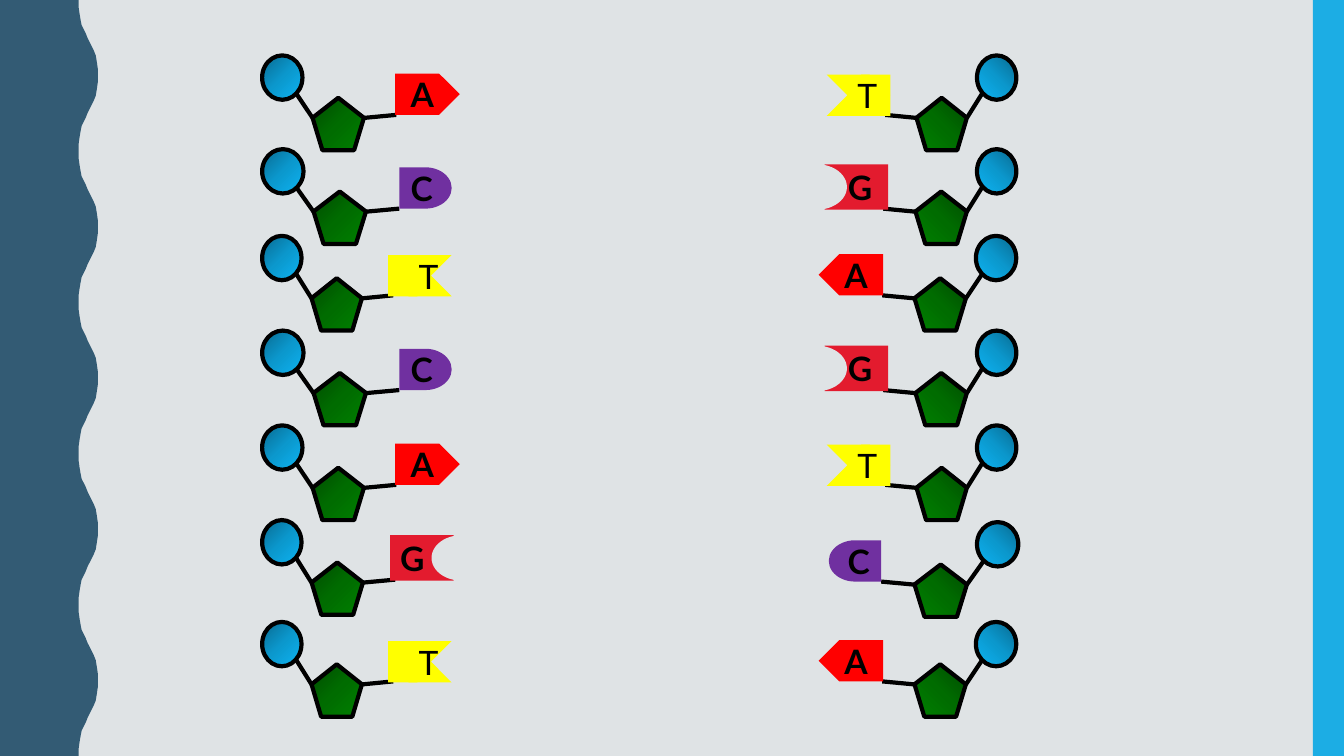
from copy import deepcopy

from lxml import etree
from pptx import Presentation
from pptx.dml.color import RGBColor
from pptx.enum.shapes import MSO_CONNECTOR, MSO_SHAPE
from pptx.enum.text import MSO_ANCHOR, PP_ALIGN
from pptx.oxml.ns import qn
from pptx.util import Inches, Pt

STRAIGHT = MSO_CONNECTOR.STRAIGHT
RECT, CIRCLE, PENTAGON = MSO_SHAPE.RECTANGLE, MSO_SHAPE.OVAL, MSO_SHAPE.REGULAR_PENTAGON
POINTED, NOTCHED, ROUNDED = MSO_SHAPE.PENTAGON, MSO_SHAPE.CHEVRON, MSO_SHAPE.FLOWCHART_DELAY
LEFT, CENTER, MIDDLE = PP_ALIGN.LEFT, PP_ALIGN.CENTER, MSO_ANCHOR.MIDDLE

BACKGROUND = RGBColor(0xDF, 0xE3, 0xE5)
NAVY = RGBColor(0x33, 0x5B, 0x74)
SKY = RGBColor(0x1C, 0xAD, 0xE4)
BLACK = RGBColor(0x00, 0x00, 0x00)
RED = RGBColor(0xFF, 0x00, 0x00)
PURPLE = RGBColor(0x70, 0x30, 0xA0)
YELLOW = RGBColor(0xFF, 0xFF, 0x00)
CRIMSON = RGBColor(0xE3, 0x1B, 0x2E)
PHOSPHATE = (RGBColor(0x08, 0x6A, 0x90), RGBColor(0x0B, 0x98, 0xCD), RGBColor(0x0D, 0xB4, 0xF3))
SUGAR = (RGBColor(0x00, 0x4C, 0x00), RGBColor(0x00, 0x6C, 0x00), RGBColor(0x00, 0x80, 0x00))

LETTER_FONT = {"name": "Lato", "size": Pt(24), "bold": True}

# Per base: phosphate width, sugar left and width, end of the link to the base
BACKBONE = {
    "A": (0.40, 3.10, 0.51, 3.93),
    "C": (0.41, 3.11, 0.52, 3.96),
    "T": (0.39, 3.09, 0.50, 3.90),
    "G": (0.39, 3.09, 0.51, 3.92),
}
# Half a wave of the left border; the other half mirrors it
WAVE_PERIOD = 1.5
HALF_WAVE = [(0.78, 0), (0.78, 0.07), (0.79, 0.14), (0.8, 0.2), (0.81, 0.25),
             (0.83, 0.29), (0.85, 0.33), (0.87, 0.38), (0.89, 0.42), (0.91, 0.46),
             (0.93, 0.5), (0.95, 0.55), (0.96, 0.61), (0.97, 0.68), (0.97, 0.75)]

ROW_TOPS = [0.55, 1.48, 2.34, 3.28, 4.22, 5.16, 6.17]
PAIR_AXIS = 12.68
# Each strand: mirror axis (None for the left side), then (row top, base)
STRANDS = [
    (None, list(zip(ROW_TOPS, "ACTCAGT"))),
    (PAIR_AXIS, [pair for pair in zip(ROW_TOPS, "TGAGT A") if pair[1] != " "]),
    (12.7, [(5.18, "C")]),
]


class DnaSlide:
    def __init__(self, slide):
        self.slide = slide
        self.canvas = slide.shapes
        self.axis = None
        background = slide.background.fill
        background.solid()
        background.fore_color.rgb = BACKGROUND

    def start_strand(self, axis):
        """Open a group; with an axis, everything in it is mirrored left to right."""
        self.canvas = self.slide.shapes.add_group_shape().shapes
        self.axis = axis

    def mirror(self, x, width=0):
        return x if self.axis is None else self.axis - x - width

    def paint(self, shape, color):
        shape.shadow.inherit = False
        shape.fill.solid()
        shape.fill.fore_color.rgb = color
        shape.line.fill.background()

    def block(self, preset, x, y, width, height, color, flip=False):
        shape = self.canvas.add_shape(preset, Inches(self.mirror(x, width)), Inches(y),
                                      Inches(width), Inches(height))
        self.paint(shape, color)
        if flip != (self.axis is not None):
            shape.element.spPr.find(qn("a:xfrm")).set("flipH", "1")
        return shape

    def molecule(self, preset, x, y, width, height, colors):
        """Add an outlined shape with a three-stop diagonal gradient."""
        shape = self.block(preset, x, y, width, height, colors[0])
        shape.fill.gradient()
        shape.fill.gradient_angle = 315
        stop_list = shape.element.spPr.find(qn("a:gradFill")).find(qn("a:gsLst"))
        stop_list.insert(1, deepcopy(stop_list[0]))
        for stop, color, position in zip(shape.fill.gradient_stops, colors, (0, 0.5, 1)):
            stop.color.rgb = color
            stop.position = position
        shape.line.color.rgb = BLACK
        shape.line.width = Pt(3)

    def bond(self, x1, y1, x2, y2):
        line = self.canvas.add_connector(STRAIGHT, Inches(self.mirror(x1)), Inches(y1),
                                         Inches(self.mirror(x2)), Inches(y2))
        line.line.color.rgb = BLACK
        line.line.width = Pt(3)
        etree.SubElement(line.element.spPr, qn("a:effectLst"))

    def letter(self, shape, text, align=CENTER, **font_changes):
        frame = shape.text_frame
        frame.vertical_anchor = MIDDLE
        paragraph = frame.paragraphs[0]
        paragraph.alignment = align
        run = paragraph.add_run()
        run.text = text
        for key, value in {**LETTER_FONT, **font_changes}.items():
            setattr(run.font, key, value)
        run.font.color.rgb = BLACK

    def base(self, name, top):
        if name == "A":
            self.letter(self.block(POINTED, 3.92, top + 0.18, 0.64, 0.41, RED), name)
        elif name == "C":
            self.letter(self.block(ROUNDED, 3.96, top + 0.18, 0.52, 0.41, PURPLE), name)
        elif name == "T":
            self.block(RECT, 3.85, top + 0.19, 0.29, 0.41, YELLOW)
            notch = self.block(NOTCHED, 3.85, top + 0.19, 0.63, 0.41, YELLOW, flip=True)
            self.letter(notch, name, bold=False)
        else:
            guanine = self.block(RECT, 3.87, top + 0.15, 0.63, 0.45, CRIMSON)
            self.letter(guanine, name, LEFT)
            if self.axis is not None:
                guanine.text_frame.margin_left = Inches(0.23)
            self.block(ROUNDED, 4.28, top + 0.15, 0.59, 0.45, BACKGROUND, flip=True)

    def nucleotide(self, name, top):
        phosphate_width, sugar_left, sugar_width, link_end = BACKBONE[name]
        corner_y = top + 0.62
        self.molecule(CIRCLE, 2.6, top, phosphate_width, 0.44, PHOSPHATE)
        self.molecule(PENTAGON, sugar_left, top + 0.42, sugar_width, 0.52, SUGAR)
        self.bond(sugar_left, corner_y, 2.94, top + 0.38)
        self.bond(sugar_left + sugar_width, corner_y, link_end, top + 0.59)
        self.base(name, top)

    def wavy_border(self, height):
        wave = HALF_WAVE + [(x, WAVE_PERIOD - y) for x, y in HALF_WAVE[-2::-1]]
        edge = [(x, y + WAVE_PERIOD * period)
                for period in range(round(height / WAVE_PERIOD)) for x, y in wave]
        outline = self.canvas.build_freeform(0, 0)
        outline.add_line_segments([(Inches(x), Inches(y)) for x, y in edge + [(0, height)]])
        self.paint(outline.convert_to_shape(), NAVY)


def main():
    deck = Presentation()
    deck.slide_width, deck.slide_height = Inches(13.33), Inches(7.5)
    dna = DnaSlide(deck.slides.add_slide(deck.slide_layouts[6]))
    dna.wavy_border(7.5)
    dna.block(RECT, 13.02, 0, 0.31, 7.5, SKY)
    for axis, nucleotides in STRANDS:
        dna.start_strand(axis)
        for top, name in nucleotides:
            dna.nucleotide(name, top)
    deck.save("out.pptx")


if __name__ == "__main__":
    main()
